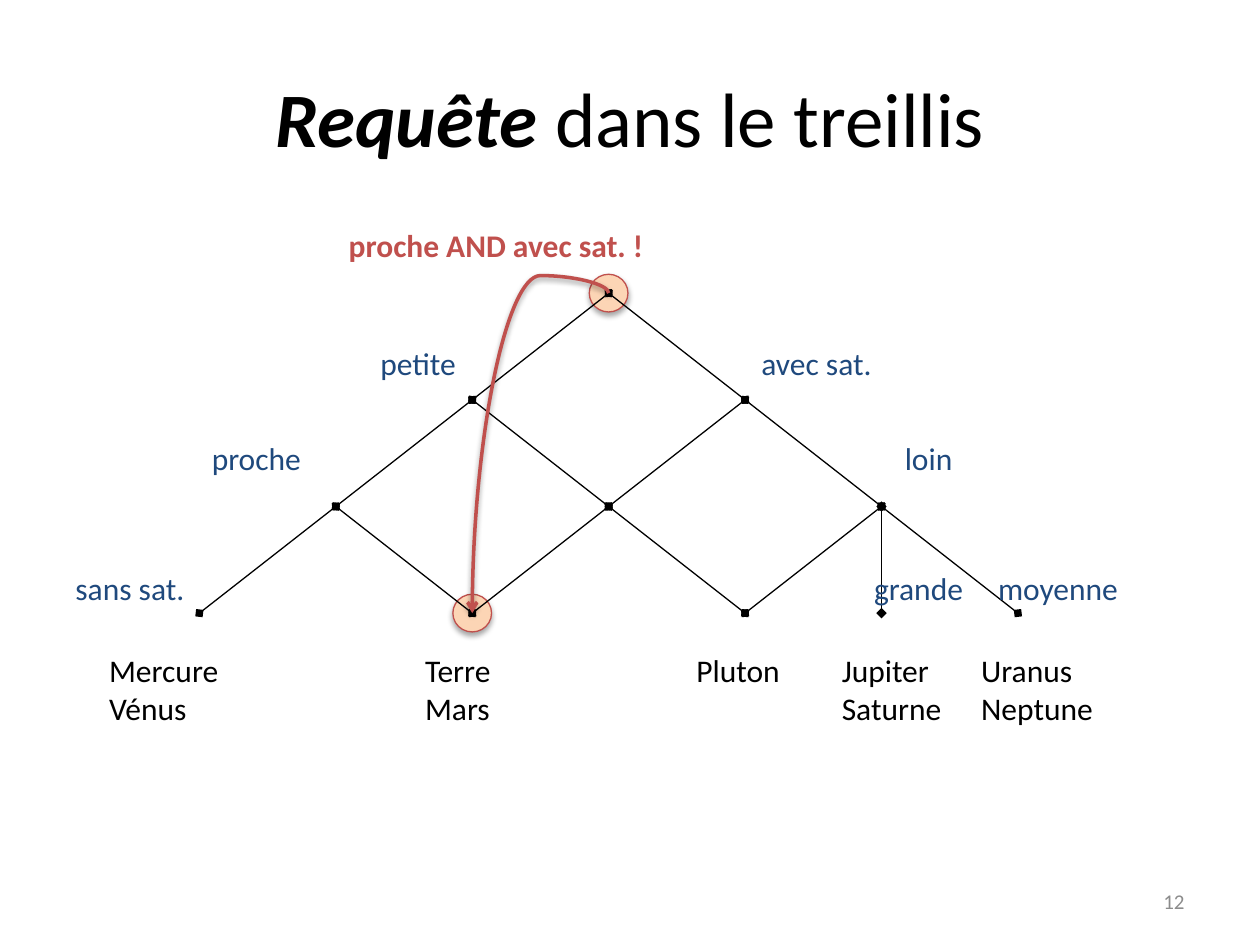
import pptx
import pptx.dml.color
import pptx.enum.shapes
import pptx.enum.text
import pptx.oxml
import pptx.oxml.ns
import pptx.util
from pptx.util import Cm

COLORS = {
    "black": "000000",
    "property": "1F497D",
    "query": "C0504D",
    "halo": "FCD5B5",
    "number": "8C8C8C",
}
FONT = "Calibri"
INSET = 0.25  # side margin of a text box, cm
COL_STEP, ROW_STEP = 2.75, 2.15  # spacing of the lattice nodes, cm
LEVELS, TOP_COL = 4, 3

ALIGN = pptx.enum.text.PP_ALIGN
CONNECTOR = pptx.enum.shapes.MSO_CONNECTOR


def rgb(name):
    return pptx.dml.color.RGBColor.from_string(COLORS[name])


def add_text(slide, box, lines, color, size=18, bold=False, align=ALIGN.LEFT,
             middle=False, wrap=True):
    """Place lines of text in box (left, top, width, height in cm)."""
    frame = slide.shapes.add_textbox(*map(Cm, box)).text_frame
    frame.word_wrap = wrap
    if middle:
        frame.vertical_anchor = pptx.enum.text.MSO_ANCHOR.MIDDLE
    frame.text = "\n".join(lines)
    for paragraph in frame.paragraphs:
        paragraph.alignment = align
        for run in paragraph.runs:
            run.font.name = FONT
            run.font.size = pptx.util.Pt(size)
            run.font.bold = bold
            run.font.color.rgb = rgb(color)
    return frame


def set_effects(shape, shadow_alpha=None, distance=0):
    """Give the shape a soft shadow below it, or none at all."""
    effects = pptx.oxml.parse_xml(
        f'<a:effectLst {pptx.oxml.ns.nsdecls("a")}/>')
    if shadow_alpha:
        effects.append(pptx.oxml.parse_xml(
            f'<a:outerShdw {pptx.oxml.ns.nsdecls("a")} blurRad="40000" '
            f'dist="{distance}" dir="5400000" rotWithShape="0">'
            f'<a:srgbClr val="{COLORS["black"]}">'
            f'<a:alpha val="{shadow_alpha * 1000}"/></a:srgbClr></a:outerShdw>'))
    shape._element.spPr.append(effects)


def set_line(connector, color, width, **ends):
    connector.line.color.rgb = rgb(color)
    connector.line.width = pptx.util.Pt(width)
    line = connector.line._get_or_add_ln()
    for end in ("headEnd", "tailEnd"):
        if end in ends:
            line.append(pptx.oxml.parse_xml(
                f'<a:{end} {pptx.oxml.ns.nsdecls("a")} type="{ends[end]}"/>'))


def node(box, col, row):
    return box[0] + col * COL_STEP, box[1] + row * ROW_STEP


def add_title(slide, box):
    frame = add_text(slide, box, ["Requête"], "black", 44, True,
                     ALIGN.CENTER, middle=True)
    query_word = frame.paragraphs[0].runs[0]
    query_word.font.italic = True
    rest = frame.paragraphs[0].add_run()
    rest.text = " dans le treillis"
    rest.font.name = FONT
    rest.font.size = pptx.util.Pt(44)
    rest.font.color.rgb = rgb("black")


def add_halos(slide, box):
    """Circles around the start and the answer of the query."""
    width, height = 0.78, 0.76
    for col, row in ((2, 3), (3, 0)):
        x, y = node(box, col, row)
        halo = slide.shapes.add_shape(
            pptx.enum.shapes.MSO_SHAPE.OVAL, Cm(x - width / 2),
            Cm(y - height / 2), Cm(width), Cm(height))
        halo.fill.solid()
        halo.fill.fore_color.rgb = rgb("halo")
        halo.line.color.rgb = rgb("query")
        halo.line.width = pptx.util.Pt(0.75)
        set_effects(halo, 35, 23000)


def add_lattice(slide, box):
    # Each node is joined to its two children
    edges = [((col, row), (col + side, row + 1))
             for row in range(LEVELS - 1)
             for col in range(TOP_COL - row, TOP_COL + row + 1, 2)
             for side in (-1, 1)]
    edges.append(((5, 2), (5, 3)))
    for parent, child in edges:
        edge = slide.shapes.add_connector(
            CONNECTOR.STRAIGHT,
            *map(Cm, node(box, *child) + node(box, *parent)))
        set_line(edge, "black", 0.75, headEnd="diamond", tailEnd="diamond")
        set_effects(edge)

    # Properties: text, left and top of the words from the lattice corner
    properties = [
        ("petite", 3.65, 0.91), ("avec sat.", 11.33, 0.91),
        ("proche", 0.25, 2.82), ("loin", 14.22, 2.82),
        ("sans sat.", -2.5, 5.43), ("grande", 13.6, 5.43),
        ("moyenne", 16.1, 5.43),
    ]
    # Objects at the foot of the lattice
    planets = [
        (("Mercure", "Vénus"), -1.82), (("Terre", "Mars"), 4.55),
        (("Pluton",), 10.02), (("Jupiter", "Saturne"), 12.95),
        (("Uranus", "Neptune"), 15.76),
    ]
    labels = [((text,), x, y, "property") for text, x, y in properties]
    labels += [(names, x, 7.09, "black") for names, x in planets]
    for lines, x, y, color in labels:
        add_text(slide, (box[0] + x - INSET, box[1] + y, 3.2,
                         0.2 + 0.8 * len(lines)), lines, color, wrap=False)


def add_query(slide, box):
    """Curved arrow from the top node to the answer, with its caption."""
    start_x, start_y = node(box, 3, 0)
    end_x, end_y = node(box, 2, 3)
    # The curve is drawn lying down, then turned by a quarter
    length, breadth = end_y - start_y, start_x - end_x
    left = (start_x + end_x - length) / 2
    top = (start_y + end_y - breadth) / 2
    arrow = slide.shapes.add_connector(
        CONNECTOR.CURVE, Cm(left), Cm(top), Cm(left + length),
        Cm(top + breadth))
    properties = arrow._element.spPr
    properties.find(pptx.oxml.ns.qn("a:xfrm")).set("rot", "5400000")
    geometry = properties.find(pptx.oxml.ns.qn("a:prstGeom"))
    for old in list(geometry):
        geometry.remove(old)
    geometry.append(pptx.oxml.parse_xml(
        f'<a:avLst {pptx.oxml.ns.nsdecls("a")}>'
        '<a:gd name="adj1" fmla="val -5500"/></a:avLst>'))
    set_line(arrow, "query", 2, tailEnd="arrow")
    set_effects(arrow, 38, 20000)
    add_text(slide, (box[0] + 2.76, box[1] - 1.47, 9.96, 1.02),
             ["proche AND avec sat. !"], "query", bold=True)


def main():
    deck = pptx.Presentation()
    deck.slide_width, deck.slide_height = Cm(25.4), Cm(19.05)
    slide = deck.slides.add_slide(deck.slide_layouts[6])
    lattice = (4.02, 5.91)  # left column and top row of the nodes
    add_halos(slide, lattice)
    add_title(slide, (1.27, 0.76, 22.86, 3.18))
    add_lattice(slide, lattice)
    add_query(slide, lattice)
    # Slide number
    add_text(slide, (18.2, 17.66, 5.93, 1.01), ["12"], "number", 12,
             align=ALIGN.RIGHT, middle=True)
    deck.save("out.pptx")


if __name__ == "__main__":
    main()
